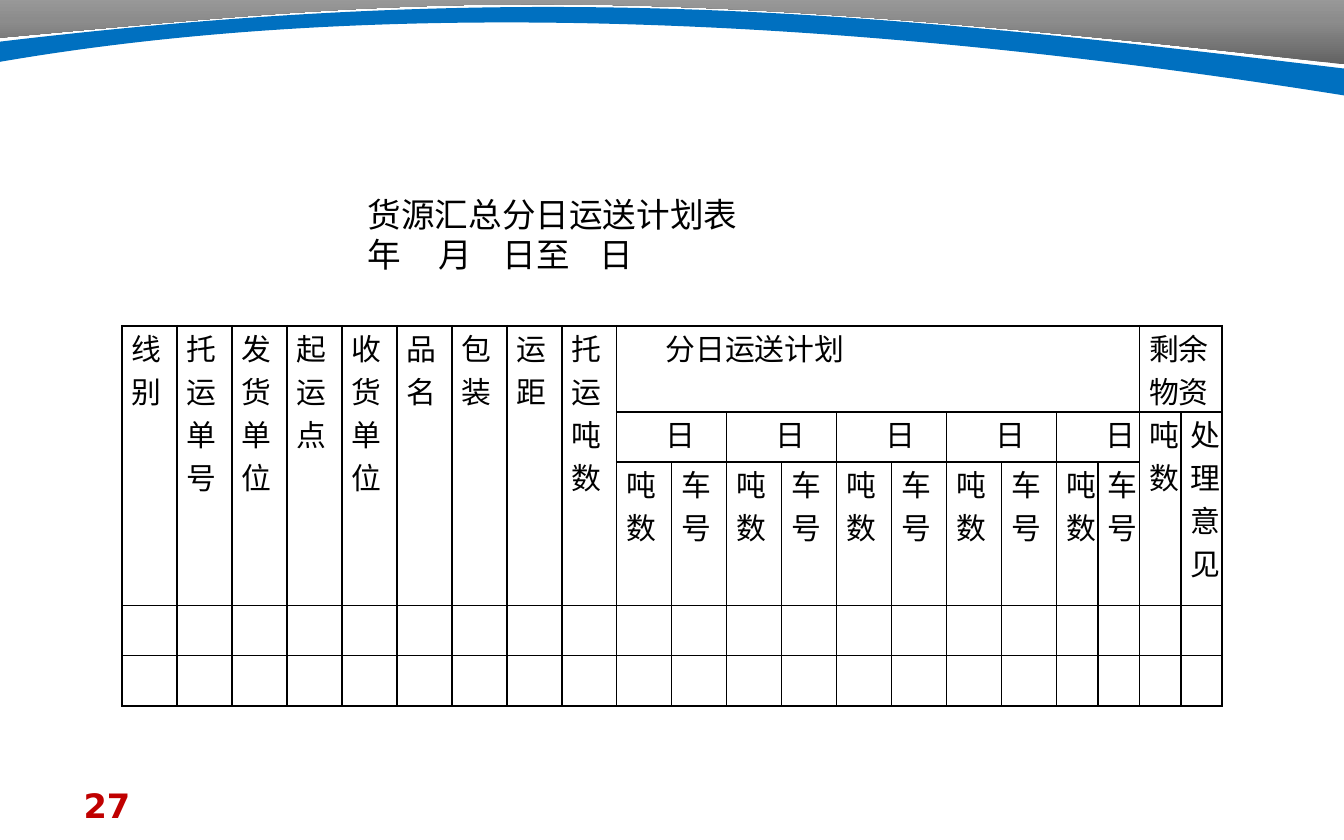
import pptx
import pptx.dml.color
import pptx.enum.text
import pptx.oxml
import pptx.util
from lxml import etree

Pt = pptx.util.Pt
A = "http://schemas.openxmlformats.org/drawingml/2006/main"
COLORS = {"black": "000000", "blue": "0070C0", "red": "C00000", "white": "FFFFFF",
          "dark": "626262", "middle": "8C8C8C", "light": "A6A6A6"}
CJK = "Noto Sans CJK SC"


def add_run(paragraph, text, size, font, color="black", bold=False):
    run = paragraph.add_run()
    run.text = text
    run.font.size = Pt(size)
    run.font.bold = bold
    run.font.name = font
    run.font.color.rgb = pptx.dml.color.RGBColor.from_string(COLORS[color])
    east_asian = etree.Element(f"{{{A}}}ea", typeface=CJK)
    run.font._element.find(f"{{{A}}}latin").addnext(east_asian)


presentation = pptx.Presentation()
presentation.slide_width = Pt(720)
presentation.slide_height = Pt(450)
slide = presentation.slides.add_slide(presentation.slide_layouts[5])

# Curved header: grey area, then blue band; each curve takes three points
grey = [(720, 34.5), (319, -12.2), (221.8, 0), (0, 20.2), (0, 13.7), (0, -1.4), (720, -1.4)]
blue = [(0, 22.3), (290.2, -12.2), (469.4, 6.5), (720, 36.7),
        (720, 51.1), (435.6, 5.8), (192.2, 0), (0, 33.1)]
header = []
for points, curve_starts in ((grey, (0,)), (blue, (0, 4))):
    points = [(Pt(x), Pt(y)) for x, y in points]
    builder = slide.shapes.build_freeform(*points[0], scale=1.0)
    builder.add_line_segments(points[1:], close=True)
    shape = builder.convert_to_shape()
    shape.shadow.inherit = False
    shape.fill.solid()
    shape.fill.fore_color.rgb = pptx.dml.color.RGBColor.from_string(COLORS["blue"])
    shape.line.fill.background()
    segments = list(shape._element.iter(f"{{{A}}}lnTo"))
    for start in curve_starts:
        bezier = etree.Element(f"{{{A}}}cubicBezTo")
        segments[start].addprevious(bezier)
        for segment in segments[start:start + 3]:
            bezier.append(segment[0])
            segment.getparent().remove(segment)
    header.append(shape)

# Grey gradient and the white edge under it
properties = header[0]._element.spPr
stops = "".join(f'<a:gs pos="{position}"><a:srgbClr val="{COLORS[name]}"/></a:gs>'
                for position, name in ((0, "dark"), (50000, "middle"), (100000, "light")))
solid = properties.find(f"{{{A}}}solidFill")
properties.replace(solid, pptx.oxml.parse_xml(
    f'<a:gradFill xmlns:a="{A}" rotWithShape="1"><a:gsLst>{stops}</a:gsLst>'
    '<a:lin ang="16200000" scaled="0"/></a:gradFill>'))
properties.find(f"{{{A}}}effectLst").append(pptx.oxml.parse_xml(
    f'<a:outerShdw xmlns:a="{A}" dist="{Pt(2)}" dir="5400000" algn="t" rotWithShape="0">'
    f'<a:srgbClr val="{COLORS["white"]}"/></a:outerShdw>'))

# Title with the date line set on tab stops
title = slide.shapes.title
title.left, title.top, title.width, title.height = Pt(189.8), Pt(100.3), Pt(360), Pt(51)
frame = title.text_frame
frame.word_wrap = True
frame.auto_size = pptx.enum.text.MSO_AUTO_SIZE.NONE
frame.vertical_anchor = pptx.enum.text.MSO_ANCHOR.TOP
for index, line in enumerate(("货源汇总分日运送计划表", "年\t月\t日至\t日")):
    paragraph = frame.add_paragraph() if index else frame.paragraphs[0]
    paragraph.alignment = pptx.enum.text.PP_ALIGN.LEFT
    paragraph.line_spacing = Pt(21.5)
    paragraph.space_before = Pt(0)
    if "\t" in line:
        tabs = etree.SubElement(paragraph._p.get_or_add_pPr(), f"{{{A}}}tabLst")
        for position in (37.7, 72.2, 124.2):
            etree.SubElement(tabs, f"{{{A}}}tab", pos=str(Pt(position)), algn="l")
    add_run(paragraph, line, 18, CJK)

# Page number
number = slide.shapes.add_textbox(Pt(37.7), Pt(416.9), Pt(168), Pt(24))
number.text_frame.word_wrap = True
add_run(number.text_frame.paragraphs[0], "27", 18, "DejaVu Sans", "red", True)

# Plan table: 17 wide and 4 narrow columns
widths = [29.48] * 17 + [22.2] * 4
heights = [46.3, 26.8, 76.6, 26.8, 27.1]
table = slide.shapes.add_table(len(heights), len(widths), Pt(65.3), Pt(174.5),
                               Pt(sum(widths)), Pt(sum(heights))).table
table.first_row = False
table.horz_banding = False
for column, width in zip(table.columns, widths):
    column.width = Pt(width)
for row, height in zip(table.rows, heights):
    row.height = Pt(height)

# Headings: row, column, rows spanned, columns spanned, text, indent
headings = [(0, column, 3, 1, text, 0) for column, text in enumerate(
    ("线别", "托运单号", "发货单位", "起运点", "收货单位", "品名", "包装", "运距", "托运吨数"))]
headings += [(0, 9, 1, 10, "分日运送计划", 21), (0, 19, 1, 2, "剩余物资", 0),
             (1, 19, 2, 1, "吨数", 0), (1, 20, 2, 1, "处理意见", 0)]
for column in range(9, 19, 2):
    headings += [(1, column, 1, 2, "日", 21), (2, column, 1, 1, "吨数", 0),
                 (2, column + 1, 1, 1, "车号", 0)]

# Cell borders, margins and fill
for cell in table.iter_cells():
    cell.margin_left = cell.margin_right = Pt(5.2)
    cell.margin_top = cell.margin_bottom = 0
    cell_properties = cell._tc.get_or_add_tcPr()
    for side in ("lnL", "lnR", "lnT", "lnB"):
        cell_properties.append(pptx.oxml.parse_xml(
            f'<a:{side} xmlns:a="{A}" w="{Pt(1)}"><a:solidFill>'
            f'<a:srgbClr val="{COLORS["black"]}"/></a:solidFill></a:{side}>'))
    cell.fill.background()

for row, column, rows, columns, text, indent in headings:
    cell = table.cell(row, column)
    if rows * columns > 1:
        cell.merge(table.cell(row + rows - 1, column + columns - 1))
    paragraph = cell.text_frame.paragraphs[0]
    if indent:
        paragraph._p.get_or_add_pPr().set("indent", str(Pt(indent)))
    add_run(paragraph, text, 16, "Calibri")

presentation.save("out.pptx")
